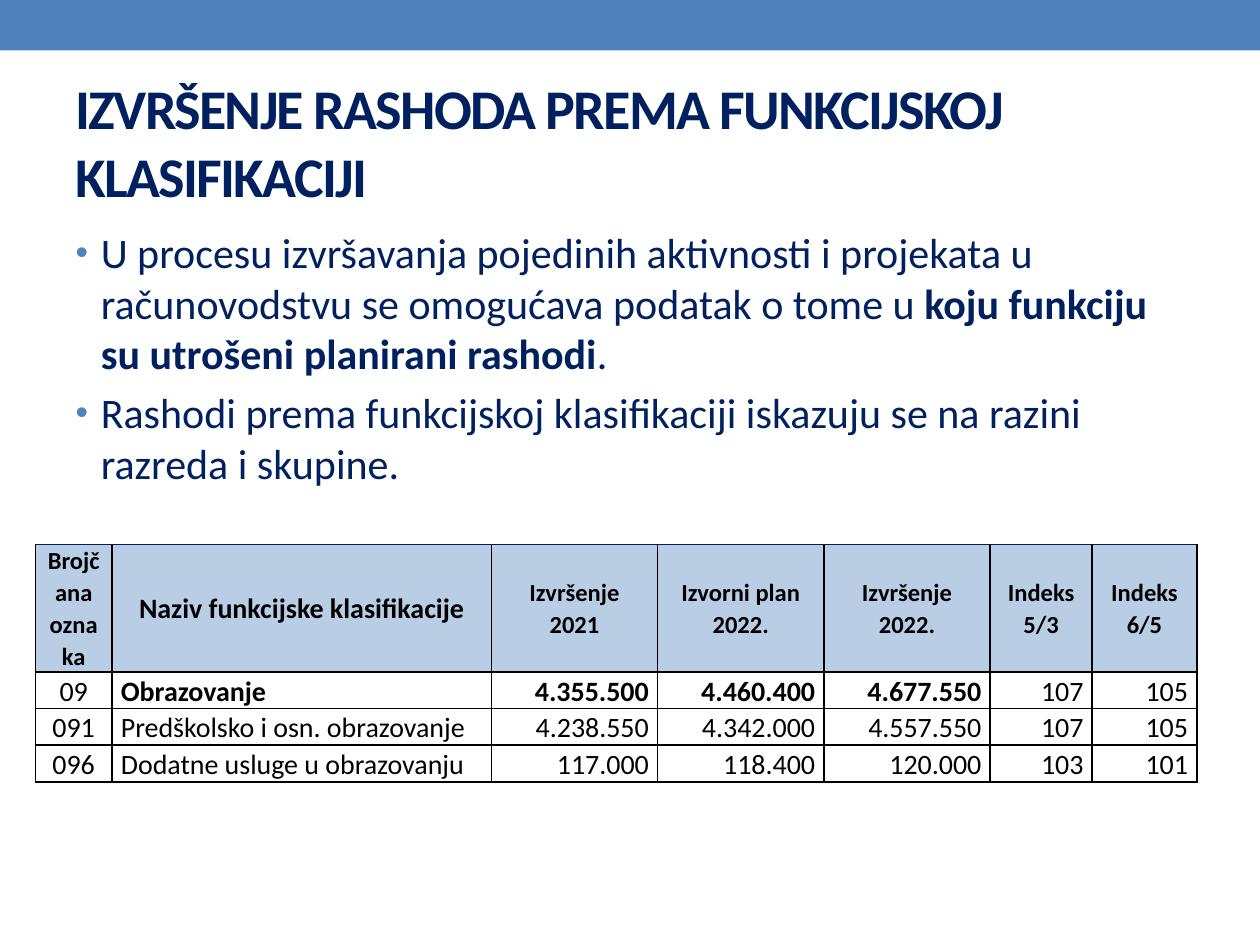
from lxml.etree import SubElement
from pptx import Presentation
from pptx.dml.color import RGBColor
from pptx.enum.shapes import MSO_SHAPE as Shape
from pptx.enum.text import MSO_ANCHOR as Anchor, MSO_AUTO_SIZE as AutoSize, PP_ALIGN as Align
from pptx.oxml.ns import qn
from pptx.util import Inches, Pt

BLUE = RGBColor(0x4F, 0x81, 0xBD)
NAVY = RGBColor(0x00, 0x20, 0x60)
PALE = RGBColor(0xB9, 0xCD, 0xE5)
BLACK = RGBColor(0x00, 0x00, 0x00)
WHITE = RGBColor(0xFF, 0xFF, 0xFF)

COLS, ROWS = 100, 75  # grid over the slide

TITLE = "IZVRŠENJE RASHODA PREMA FUNKCIJSKOJ KLASIFIKACIJI"
BULLETS = [
    [("U procesu izvršavanja pojedinih aktivnosti i projekata u "
      "računovodstvu se omogućava podatak o tome u ", False),
     ("koju funkciju su utrošeni planirani rashodi", True), (".", False)],
    [("Rashodi prema funkcijskoj klasifikaciji iskazuju se na razini "
      "razreda i skupine.", False)],
]
HEADER = ["Brojčana oznaka", "Naziv funkcijske klasifikacije", "Izvršenje\v2021",
          "Izvorni plan 2022.", "Izvršenje 2022.", "Indeks 5/3", "Indeks 6/5"]
DATA = [
    ["09", "Obrazovanje", "4.355.500", "4.460.400", "4.677.550", "107", "105"],
    ["091", "Predškolsko i osn. obrazovanje", "4.238.550", "4.342.000", "4.557.550", "107", "105"],
    ["096", "Dodatne usluge u obrazovanju", "117.000", "118.400", "120.000", "103", "101"],
]
COL_WIDTHS = [6.1, 30.1, 13.2, 13.2, 13.2, 8.1, 8.3]
ROW_HEIGHTS = [4.1, 5.2, 2.5, 2.5, 2.5]  # the first row is a blank spacer
ALIGNS = [Align.CENTER, Align.LEFT] + [Align.RIGHT] * 5


class Deck:
    """Holds the style and the current slide."""
    font = "Calibri"

    def __init__(self):
        self.prs = Presentation()
        self.prs.slide_width, self.prs.slide_height = Inches(10), Inches(7.5)
        self.slide = self.prs.slides.add_slide(self.prs.slide_layouts[1])

    def x(self, cols):
        return round(self.prs.slide_width * cols / COLS)

    def y(self, rows):
        return round(self.prs.slide_height * rows / ROWS)

    def box(self, left, top, width, height):
        return self.x(left), self.y(top), self.x(width), self.y(height)

    def place(self, sp, *area):
        sp.left, sp.top, sp.width, sp.height = self.box(*area)
        sp.text_frame.auto_size = AutoSize.NONE
        return sp.text_frame

    def style(self, r, size, color, bold):
        for name, value in dict(name=self.font, size=Pt(size), bold=bold).items():
            setattr(r.font, name, value)
        r.font.color.rgb = color

    def bar(self, *area):
        s = self.slide.shapes.add_shape(Shape.RECTANGLE, *self.box(*area))
        s.shadow.inherit = False
        s.fill.solid()
        s.fill.fore_color.rgb = BLUE
        s.line.fill.background()

    def title(self, text, *area):
        tf = self.place(self.slide.shapes.title, *area)
        tf.vertical_anchor = Anchor.MIDDLE
        p = tf.paragraphs[0]
        p.alignment = Align.LEFT
        r = p.add_run()
        r.text = text
        self.style(r, 32, NAVY, True)
        r.font._element.set("spc", "-100")

    def bullets(self, items, *area):
        tf = self.place(self.slide.placeholders[1], *area)
        for i, runs in enumerate(items):
            p = tf.add_paragraph() if i else tf.paragraphs[0]
            p.space_before = Pt(5 if i else 0)
            pPr = p._p.get_or_add_pPr()
            pPr.set("marL", str(Inches(0.2)))
            pPr.set("indent", str(-Inches(0.2)))
            color = SubElement(pPr, qn("a:buClr"))
            SubElement(color, qn("a:srgbClr"), val=str(BLUE))
            SubElement(pPr, qn("a:buSzPct"), val="85000")
            SubElement(pPr, qn("a:buFont"), typeface="Arial")
            SubElement(pPr, qn("a:buChar"), char="•")
            for text, bold in runs:
                r = p.add_run()
                r.text = text
                self.style(r, 24, NAVY, bold)

    def borders(self, cell, **colors):
        tcPr = cell._tc.get_or_add_tcPr()
        for side, color in colors.items():
            ln = SubElement(tcPr, qn(f"a:ln{side}"), w=str(Pt(1)))
            fill = SubElement(ln, qn("a:solidFill"))
            SubElement(fill, qn("a:srgbClr"), val=str(color))

    def fill(self, cell, color):
        cell.fill.solid()
        cell.fill.fore_color.rgb = color

    def cell(self, cell, text, align, size, bold, fill, top):
        self.borders(cell, L=BLACK, R=BLACK, T=top, B=BLACK)
        self.fill(cell, fill)
        layout = dict(margin_left=Inches(0.07), margin_right=Inches(0.07),
                      margin_top=0, margin_bottom=0, vertical_anchor=Anchor.MIDDLE)
        for name, value in layout.items():
            setattr(cell, name, value)
        p = cell.text_frame.paragraphs[0]
        p.text = text
        for name, value in dict(alignment=align, line_spacing=1.07, space_after=Pt(8)).items():
            setattr(p, name, value)
        for r in p.runs:
            self.style(r, size, BLACK, bold)
        for br in p._p.findall(qn("a:br")):
            SubElement(br, qn("a:rPr"), sz=str(size * 100))

    def table(self, left, top):
        area = self.box(left, top, sum(COL_WIDTHS), sum(ROW_HEIGHTS))
        table = self.slide.shapes.add_table(len(ROW_HEIGHTS), len(COL_WIDTHS), *area).table
        table.first_row = table.horz_banding = False
        for col, width in zip(table.columns, COL_WIDTHS):
            col.width = self.x(width)
        for row, height in zip(table.rows, ROW_HEIGHTS):
            row.height = self.y(height)
        # Blank spacer row
        for c in range(len(COL_WIDTHS)):
            self.borders(table.cell(0, c), B=NAVY)
            self.fill(table.cell(0, c), WHITE)
        table.cell(0, 0).merge(table.cell(0, 4))
        # Header row
        for c, text in enumerate(HEADER):
            self.cell(table.cell(1, c), text, Align.CENTER, 16 if c == 1 else 14,
                      True, PALE, NAVY)
        # Data rows; the name and amounts of the first one are bold
        for i, values in enumerate(DATA):
            for c, text in enumerate(values):
                self.cell(table.cell(i + 2, c), text, ALIGNS[c], 16,
                          i == 0 and 1 <= c <= 4, WHITE, BLACK)


def main():
    deck = Deck()
    deck.bar(0, 0, COLS, 4)
    deck.title(TITLE, 5, 5.8, 90, 10.8)
    deck.bullets(BULLETS, 5, 17.5, 90, 53.3)
    deck.table(2.8, 39.1)
    deck.prs.save("out.pptx")


if __name__ == "__main__":
    main()
